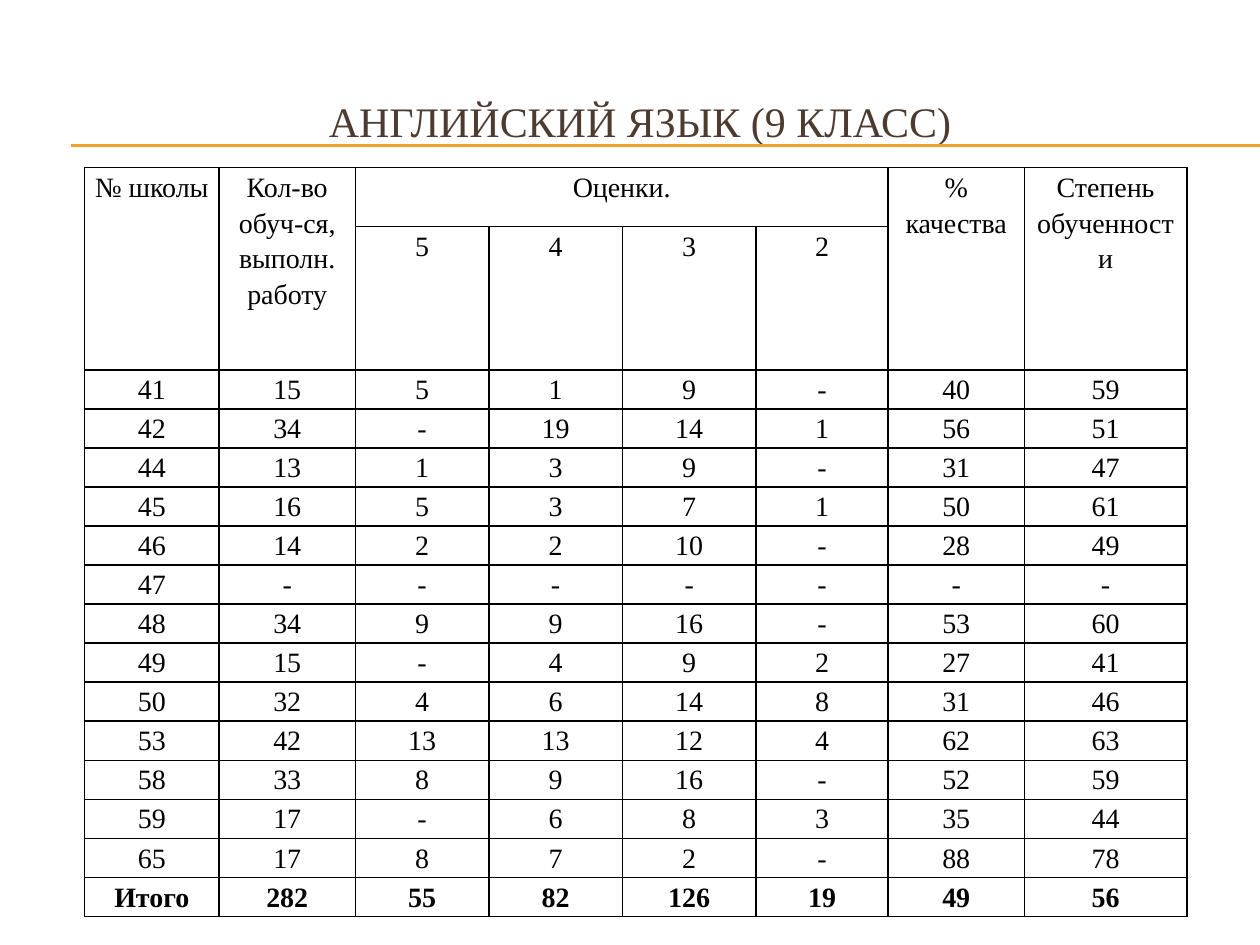
"""Build the slide with the English test results of the ninth grade."""
from lxml.etree import SubElement
from pptx import Presentation
from pptx.dml.color import RGBColor
from pptx.enum.shapes import MSO_CONNECTOR
from pptx.enum.text import MSO_ANCHOR, PP_ALIGN
from pptx.oxml import parse_xml
from pptx.oxml.ns import nsdecls, qn
from pptx.util import Inches, Pt

FONT = "Times New Roman"
BLACK = RGBColor(0x00, 0x00, 0x00)
BROWN = RGBColor(0x4E, 0x3B, 0x30)
ORANGE = RGBColor(0xF0, 0xA2, 0x2E)

COLUMN_WIDTHS = [1.07, 1.08, 1.06, 1.06, 1.06, 1.05, 1.08, 1.29]
HEADER_HEIGHTS = [0.47, 0.28]
RESULT_HEIGHT = 0.31
HEADERS = [
    ["№ школы", "Кол-во обуч-ся, выполн. работу", "Оценки.", "", "", "",
     "% качества", "Степень обученности"],
    ["", "", "5", "4", "3", "2", "", ""],
]
RESULTS = [line.split() for line in (
    "41 15 5 1 9 - 40 59",
    "42 34 - 19 14 1 56 51",
    "44 13 1 3 9 - 31 47",
    "45 16 5 3 7 1 50 61",
    "46 14 2 2 10 - 28 49",
    "47 - - - - - - -",
    "48 34 9 9 16 - 53 60",
    "49 15 - 4 9 2 27 41",
    "50 32 4 6 14 8 31 46",
    "53 42 13 13 12 4 62 63",
    "58 33 8 9 16 - 52 59",
    "59 17 - 6 8 3 35 44",
    "65 17 8 7 2 - 88 78",
    "Итого 282 55 82 126 19 49 56",
)]


def write_run(paragraph, text, size, color, bold=False):
    """Add one centred run of text to a paragraph."""
    paragraph.alignment = PP_ALIGN.CENTER
    run = paragraph.add_run()
    run.text = text
    run.font.name = FONT
    run.font.size = Pt(size)
    run.font.bold = bold
    run.font.color.rgb = color


def add_title(slide, text):
    """Place and fill the title placeholder."""
    title = slide.shapes.title
    title.left, title.top = Inches(0.33), Inches(0.5)
    title.width, title.height = Inches(9.5), Inches(0.92)
    title.text_frame.vertical_anchor = MSO_ANCHOR.MIDDLE
    write_run(title.text_frame.paragraphs[0], text, 24, BROWN)


def add_rule(slide, y):
    """Draw a thin horizontal line that runs to the right edge."""
    rule = slide.shapes.add_connector(
        MSO_CONNECTOR.STRAIGHT, Inches(0.56), Inches(y), Inches(10), Inches(y))
    rule.line.color.rgb = ORANGE
    rule.line.width = Pt(0.75)
    SubElement(rule._element.spPr, qn("a:effectLst"))


def add_borders(cell):
    """Give a cell black lines on its four sides."""
    properties = cell._tc.get_or_add_tcPr()
    for position, side in enumerate(("lnL", "lnR", "lnT", "lnB")):
        properties.insert(position, parse_xml(
            f'<a:{side} {nsdecls("a")} w="{Pt(1)}"><a:solidFill>'
            f'<a:srgbClr val="{BLACK}"/></a:solidFill></a:{side}>'))


def fill_cell(cell, text, bold):
    """Format a cell and write its text."""
    cell.margin_left = cell.margin_right = Inches(0.07)
    cell.margin_top = cell.margin_bottom = 0
    cell.fill.background()
    add_borders(cell)
    if text:
        paragraph = cell.text_frame.paragraphs[0]
        paragraph.line_spacing = 1.15
        write_run(paragraph, text, 16, BLACK, bold)


def add_results_table(slide):
    """Add the table of marks with its two-row header."""
    rows = HEADERS + RESULTS
    heights = HEADER_HEIGHTS + [RESULT_HEIGHT] * len(RESULTS)
    table = slide.shapes.add_table(
        len(rows), len(COLUMN_WIDTHS), Inches(0.67), Inches(1.33),
        Inches(sum(COLUMN_WIDTHS)), Inches(sum(heights))).table
    table.first_row = table.horz_banding = False
    for column, width in zip(table.columns, COLUMN_WIDTHS):
        column.width = Inches(width)
    for row, height in zip(table.rows, heights):
        row.height = Inches(height)
    for column in (0, 1, 6, 7):
        table.cell(0, column).merge(table.cell(1, column))
    table.cell(0, 2).merge(table.cell(0, 5))
    for row, texts in zip(table.rows, rows):
        for cell, text in zip(row.cells, texts):
            fill_cell(cell, text, bold=texts is RESULTS[-1])


def main():
    """Build and save the presentation."""
    presentation = Presentation()
    presentation.slide_width, presentation.slide_height = Inches(10), Inches(7.5)
    slide = presentation.slides.add_slide(presentation.slide_layouts[5])
    for y in (1.15, 1.16):
        add_rule(slide, y)
    add_title(slide, "АНГЛИЙСКИЙ ЯЗЫК (9 КЛАСС)")
    add_results_table(slide)
    presentation.save("out.pptx")


if __name__ == "__main__":
    main()
